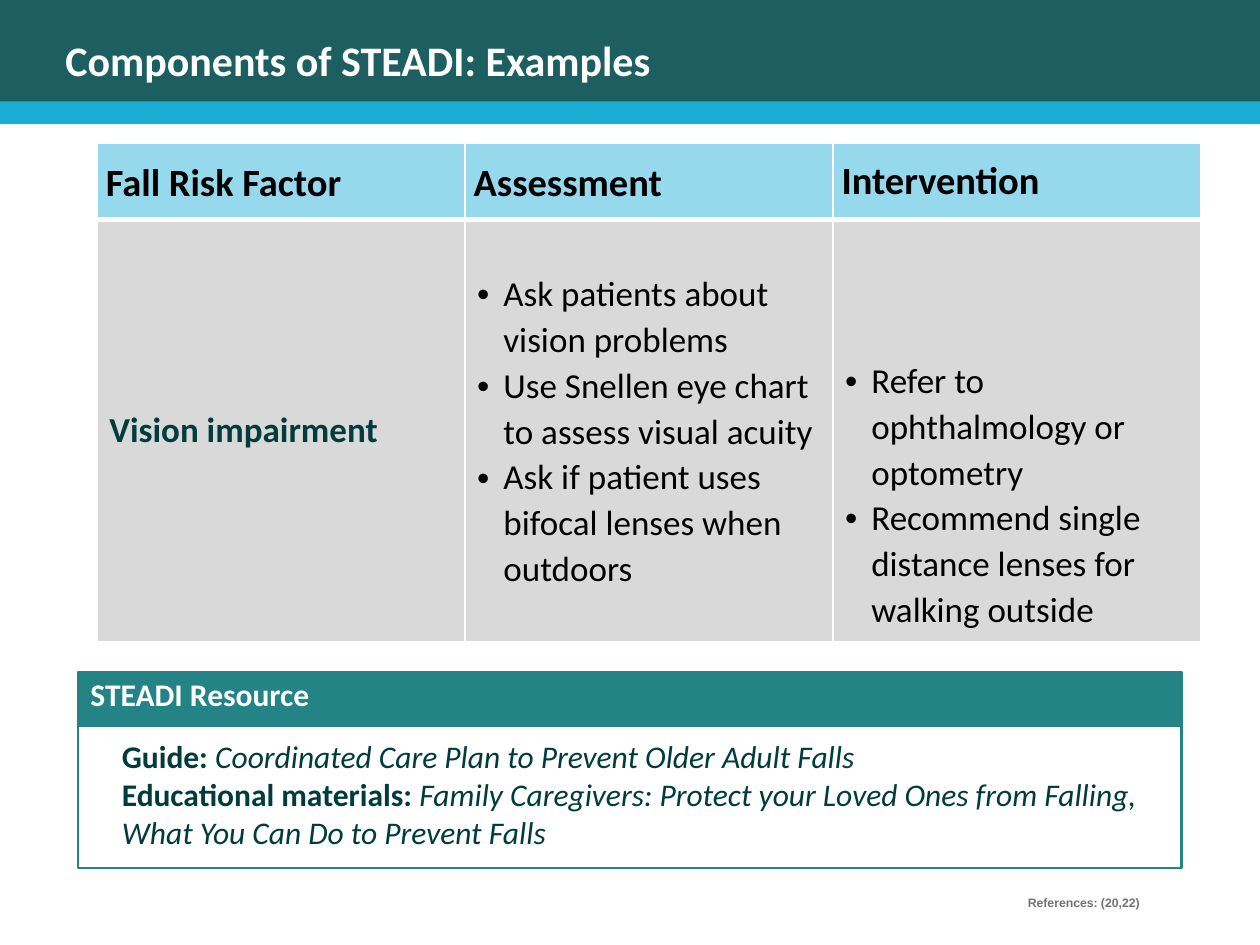
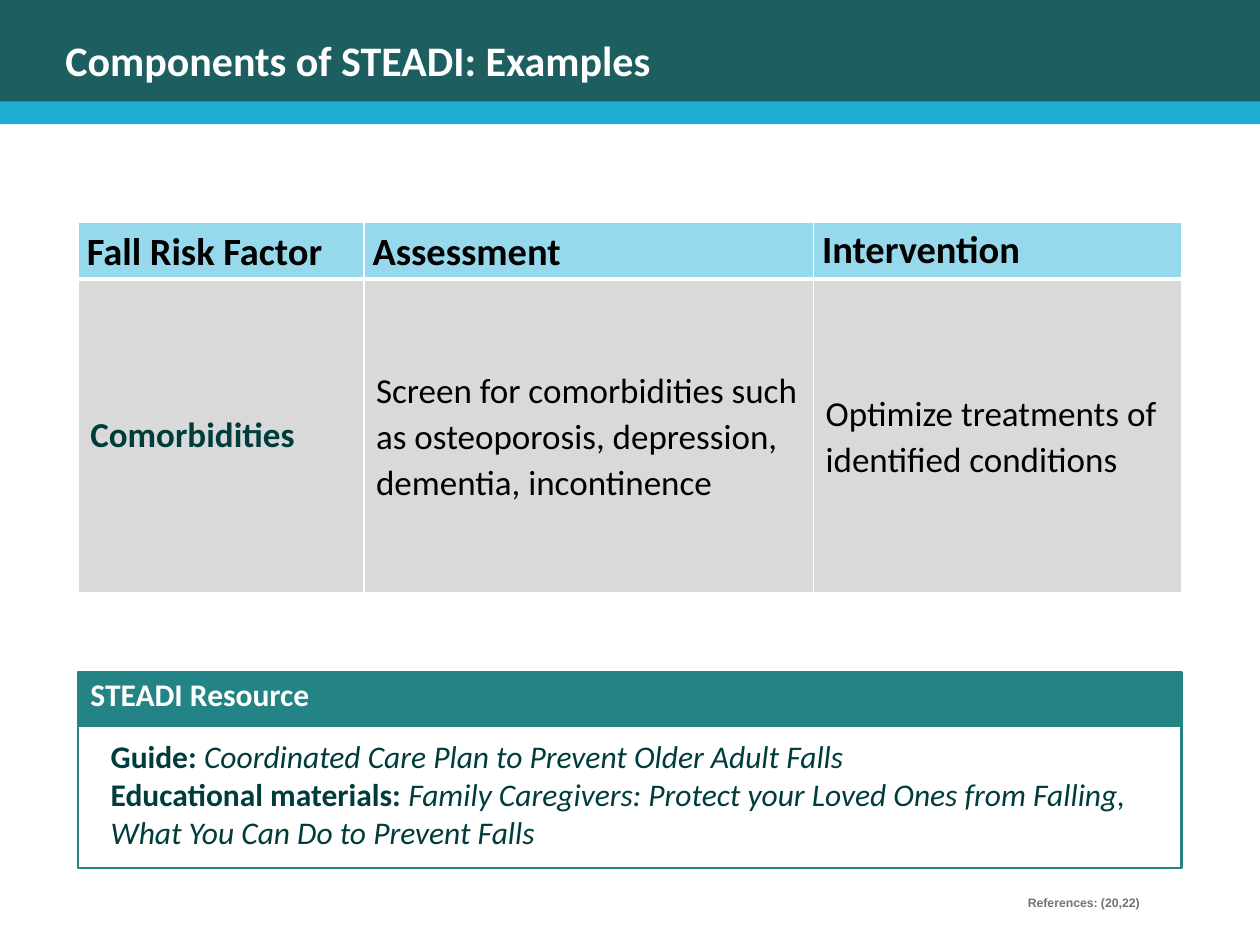
from pptx import Presentation
from pptx.dml.color import RGBColor as RGB
from pptx.enum.shapes import MSO_SHAPE as SHAPE
from pptx.enum.text import MSO_ANCHOR as ANCHOR
from pptx.oxml.xmlchemy import OxmlElement
from pptx.util import Pt

COLORS = {
    "band": "1D5F60", "stripe": "1EADD2", "resource": "238385",
    "header": "97D9EC", "body": "D9D9D9", "deep": "003C3C",
    "black": "000000", "white": "FFFFFF", "grey": "767171",
}

HEADINGS = ["Fall Risk Factor", "Assessment", "Intervention"]
RESOURCES = [
    ("Guide: ", "Coordinated Care Plan to Prevent Older Adult Falls"),
    ("Educational materials: ", "Family Caregivers: Protect your Loved Ones "
     "from Falling, What You Can Do to Prevent Falls"),
]

# Left, top, column widths, row heights; top_gap lowers the intervention text
SLIDES = [
    {
        "left": 55.5, "top": 81.6, "columns": [210.24] * 3, "rows": [44, 241],
        "resource_left": 62.6, "top_gap": 73, "bulleted": True,
        "body": [
            ["Vision impairment"],
            ["Ask patients about vision problems",
             "Use Snellen eye chart to assess visual acuity",
             "Ask if patient uses bifocal lenses when outdoors"],
            ["Refer to ophthalmology or optometry",
             "Recommend single distance lenses for walking outside"],
        ],
    },
    {
        "left": 44.64, "top": 127, "columns": [163.3, 256.9, 210.24], "rows": [32.4, 179.3],
        "resource_left": 56.2, "top_gap": 0, "bulleted": False,
        "body": [
            ["Comorbidities"],
            ["Screen for comorbidities such as osteoporosis, depression, "
             "dementia, incontinence"],
            ["Optimize treatments of identified conditions"],
        ],
    },
]


def style_runs(paragraph, size, color, bold=True, spacing=1.0, font="Calibri"):
    paragraph.line_spacing = spacing
    for run in paragraph.runs:
        run.font.name = font
        run.font.size = Pt(size)
        run.font.bold = bold
        run.font.color.rgb = RGB.from_string(COLORS[color])


def add_text(slide, left, top, width, height, text, anchor=ANCHOR.TOP):
    frame = slide.shapes.add_textbox(Pt(left), Pt(top), Pt(width), Pt(height)).text_frame
    frame.word_wrap = True
    frame.vertical_anchor = anchor
    frame.text = text
    return frame.paragraphs


prs = Presentation()
prs.slide_width, prs.slide_height = Pt(720), Pt(540)

for content in SLIDES:
    slide = prs.slides.add_slide(prs.slide_layouts[6])

    # Title bands and resource frame
    for left, top, width, height, fill, line in [
        (0, 10.8, 720, 60.2, "stripe", None),
        (0, 0, 720, 58, "band", None),
        (44.64, 414.6, 630.72, 81.4, None, "resource"),
        (44.64, 384, 630.72, 30.4, "resource", "resource"),
    ]:
        band = slide.shapes.add_shape(SHAPE.RECTANGLE, Pt(left), Pt(top), Pt(width), Pt(height))
        band.shadow.inherit = False
        if fill:
            band.fill.solid()
            band.fill.fore_color.rgb = RGB.from_string(COLORS[fill])
        else:
            band.fill.background()
        if line:
            band.line.color.rgb = RGB.from_string(COLORS[line])
            band.line.width = Pt(1.5)
        else:
            band.line.fill.background()

    # Title
    title = add_text(slide, 30.24, 14.4, 620.6, 42.5, "Components of STEADI: Examples",
                     ANCHOR.MIDDLE)
    style_runs(title[0], 24, "white", spacing=0.9)

    # Risk factor table
    columns, rows = content["columns"], content["rows"]
    risk_table = slide.shapes.add_table(
        2, 3, Pt(content["left"]), Pt(content["top"]), Pt(sum(columns)), Pt(sum(rows))).table
    for column, width in zip(risk_table.columns, columns):
        column.width = Pt(width)
    for row, height in zip(risk_table.rows, rows):
        row.height = Pt(height)

    for r, row_texts in enumerate([[[heading] for heading in HEADINGS], content["body"]]):
        for c, lines in enumerate(row_texts):
            cell = risk_table.cell(r, c)
            cell.vertical_anchor = ANCHOR.MIDDLE
            cell.margin_left = Pt(7 if r else 5)
            cell.margin_right = Pt(5)
            cell.margin_top = Pt(content["top_gap"] if r and c == 2 else 0)
            cell.margin_bottom = 0
            cell.fill.solid()
            cell.fill.fore_color.rgb = RGB.from_string(COLORS["body" if r else "header"])

            # White cell borders, thick below the header
            cell_props = cell._tc.get_or_add_tcPr()
            thick_side = "T" if r else "B"
            for position, side in enumerate("LRTB"):
                border = OxmlElement(f"a:ln{side}")
                border.set("w", str(Pt(3 if side == thick_side else 1)))
                border_fill = OxmlElement("a:solidFill")
                border_color = OxmlElement("a:srgbClr")
                border_color.set("val", COLORS["white"])
                border_fill.append(border_color)
                border.append(border_fill)
                cell_props.insert(position, border)

            cell.text_frame.text = "\n".join(lines)
            for paragraph in cell.text_frame.paragraphs:
                if r == 0:
                    style_runs(paragraph, 22, "black", spacing=1.0 if c == 2 else 1.07)
                elif c == 0:
                    style_runs(paragraph, 20, "deep")
                else:
                    style_runs(paragraph, 20, "black", bold=False, spacing=1.07)
                    if content["bulleted"]:
                        para_props = paragraph._p.get_or_add_pPr()
                        para_props.set("marL", str(Pt(15)))
                        para_props.set("indent", str(Pt(-15)))
                        bullet_font = OxmlElement("a:buFont")
                        bullet_font.set("typeface", "Arial")
                        bullet = OxmlElement("a:buChar")
                        bullet.set("char", "•")
                        para_props.extend([bullet_font, bullet])

    # Resource heading and list
    heading = add_text(slide, 44.64, 384.5, 473, 28.8, "STEADI Resource")
    style_runs(heading[0], 18, "white", spacing=0.9)

    resources = add_text(slide, content["resource_left"], 417.6, 630.72, 91.4,
                         "\n".join(label for label, _ in RESOURCES))
    for paragraph, (_, names) in zip(resources, RESOURCES):
        paragraph.add_run().text = names
        style_runs(paragraph, 18, "deep")
        paragraph.runs[1].font.bold = False
        paragraph.runs[1].font.italic = True

    # References
    references = add_text(slide, 580.3, 509, 131.8, 27.4, "References: (20,22)")
    style_runs(references[0], 7, "grey", spacing=0.9, font="Arial")

prs.save("out.pptx")
